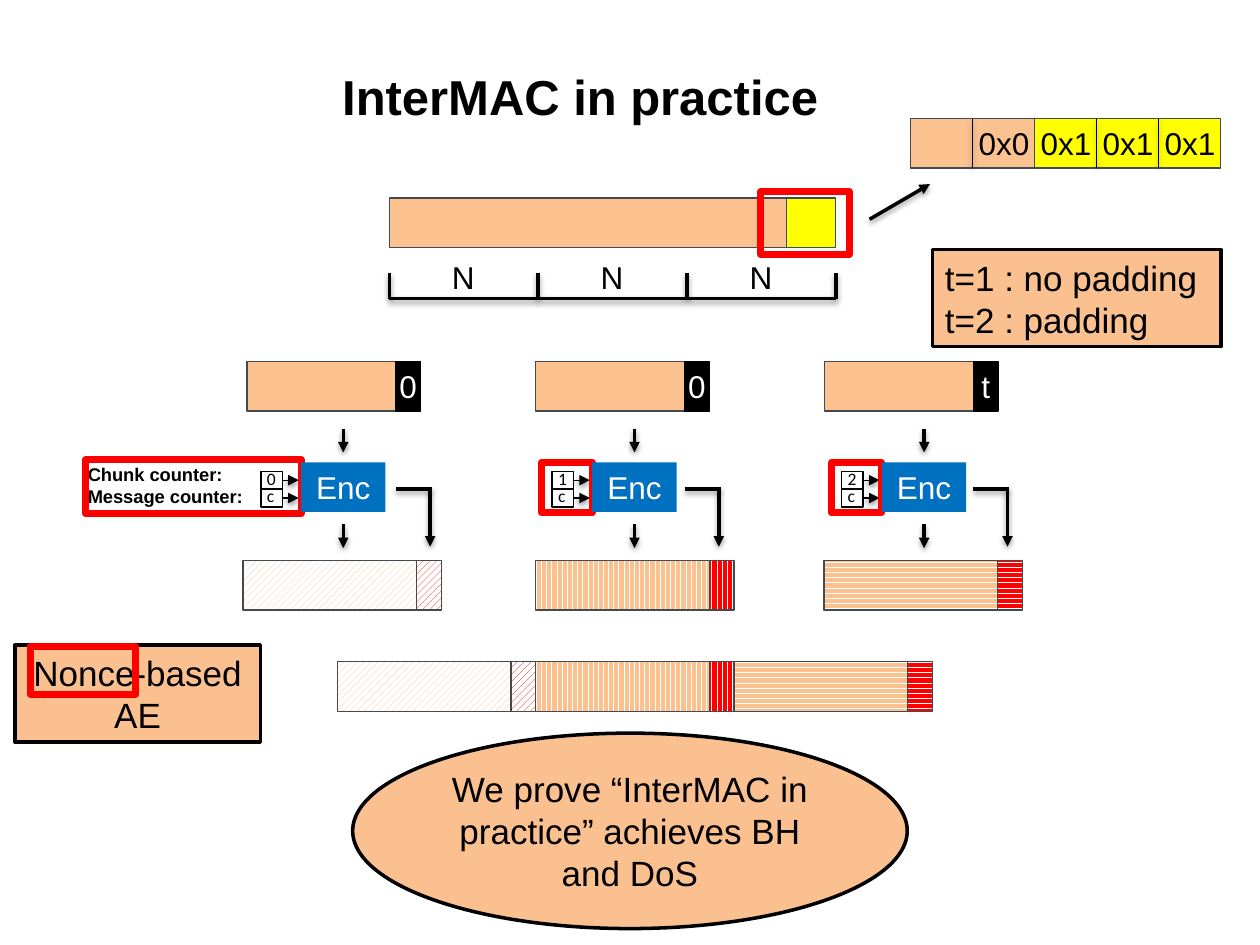
"""Builds the slide showing InterMAC chunking, encryption and nonce layout."""
from lxml.etree import SubElement
from pptx import Presentation
from pptx.dml.color import RGBColor
from pptx.enum.dml import MSO_PATTERN as Pattern
from pptx.enum.shapes import MSO_CONNECTOR as Connector, MSO_SHAPE as Shape
from pptx.enum.text import MSO_ANCHOR as Anchor, PP_ALIGN as Align
from pptx.oxml.ns import qn
from pptx.util import Cm, Pt

COLORS = {
    "black": "000000", "white": "FFFFFF", "red": "FF0000", "yellow": "FFFF00",
    "blue": "0070C0", "data": "FBC18F", "note": "FAC090", "edge": "424A4F",
}
CHUNKS = [
    {"tag": "0", "counter": "0", "enc": 6.07, "cipher": 4.9, "pattern": Pattern.WIDE_UPWARD_DIAGONAL},
    {"tag": "0", "counter": "1", "enc": 11.94, "cipher": 10.8, "pattern": Pattern.DARK_VERTICAL},
    {"tag": "t", "counter": "2", "enc": 17.78, "cipher": 16.61, "pattern": Pattern.DARK_HORIZONTAL},
]
COUNTER_NAMES = ["Chunk counter:", "Message counter:"]
PADDING_BYTES = ["0x0", "0x1", "0x1", "0x1"]
TAG_RULES = ["t=1 : no padding", "t=2 : padding"]
NONCE_NOTE = ["Nonce-based", "AE"]
CLAIM = ["We prove “InterMAC in practice” achieves BH and DoS"]
FRAMES = [
    (15.34, 3.86, 1.78, 1.27), (1.73, 9.27, 4.34, 1.09), (10.92, 9.32, 1.02, 1.02),
    (16.76, 9.32, 1.02, 1.02), (0.61, 13.03, 2.13, 0.97),
]
BAR, TAG, SEGMENT, CIPHER = 1.0, 0.5, 3.0, 3.5
MESSAGE_LEFT, CHUNK_LEFT, CHUNK_STEP = 7.85, 4.98, 5.82
ENC_TOP, ENC_WIDTH = 9.32, 1.7
BYTES_LEFT, BYTES_TOP, BYTE = 18.36, 2.39, 1.25

deck = Presentation()
deck.slide_width, deck.slide_height = Cm(25.4), Cm(19.05)
page = deck.slides.add_slide(deck.slide_layouts[6])


def color(name):
    return RGBColor.from_string(COLORS[name])


def write(frame, lines, size, ink="black", align=Align.LEFT, font="Arial", bold=False):
    for index, line in enumerate(lines):
        para = frame.paragraphs[0] if index == 0 else frame.add_paragraph()
        para.alignment = align
        span = para.add_run()
        span.text = line
        span.font.name, span.font.size, span.font.bold = font, Pt(size), bold
        span.font.color.rgb = color(ink)


def label(left, top, width, height, lines, size, wrap=False, **style):
    box = page.shapes.add_textbox(Cm(left), Cm(top), Cm(width), Cm(height))
    box.text_frame.word_wrap = wrap
    write(box.text_frame, lines, size, **style)


def block(left, top, width, height, fill=None, line="edge", weight=0.75,
          pattern=None, kind=Shape.RECTANGLE):
    box = page.shapes.add_shape(kind, Cm(left), Cm(top), Cm(width), Cm(height))
    box.shadow.inherit = False
    if pattern is not None:
        box.fill.patterned()
        box.fill.pattern = pattern
        box.fill.fore_color.rgb, box.fill.back_color.rgb = color(fill), color("white")
    elif fill:
        box.fill.solid()
        box.fill.fore_color.rgb = color(fill)
    else:
        box.fill.background()
    if line:
        box.line.color.rgb = color(line)
        box.line.width = Pt(weight)
    else:
        box.line.fill.background()
    frame = box.text_frame
    frame.word_wrap = True
    frame.vertical_anchor = Anchor.MIDDLE
    if width <= TAG:
        frame.margin_left = frame.margin_right = 0
    return frame


def stroke(x1, y1, x2, y2, weight=2, arrow=False):
    connector = page.shapes.add_connector(Connector.STRAIGHT, Cm(x1), Cm(y1), Cm(x2), Cm(y2))
    connector.line.color.rgb = color("black")
    connector.line.width = Pt(weight)
    if arrow:
        SubElement(connector.element.spPr.find(qn("a:ln")), qn("a:tailEnd"), type="triangle")


def draw_message():
    block(MESSAGE_LEFT, 3.99, 8, BAR, "data")
    block(MESSAGE_LEFT + 8, 3.99, BAR, BAR, "yellow")
    stroke(MESSAGE_LEFT, 6.02, MESSAGE_LEFT + 3 * SEGMENT, 6.02)
    for index in range(4):
        left = MESSAGE_LEFT + index * SEGMENT
        stroke(left, 5.51, left, 6.02)
        if index < 3:
            label(left + 1.01, 5.08, 0.97, 1.02, ["N"], 18)
    stroke(17.53, 4.42, 18.75, 3.71, arrow=True)


def draw_ciphertext(left, top, pattern):
    block(left, top, CIPHER, BAR, "data", pattern=pattern)
    block(left + CIPHER, top, TAG, BAR, "red", pattern=pattern)


def draw_chunk(index, chunk):
    left, enc = CHUNK_LEFT + index * CHUNK_STEP, chunk["enc"]
    tag_left = left + SEGMENT
    block(left, 7.29, SEGMENT, BAR, "data")
    tag = block(tag_left, 7.29, TAG, BAR, "black", "black")
    write(tag, [chunk["tag"]], 18, "white", Align.CENTER)
    middle = enc + ENC_WIDTH / 2
    for top in (8.64, 10.57):
        stroke(middle, top, middle, top + 0.48, arrow=True)
    for row, value in enumerate([chunk["counter"], "c"]):
        top = 9.5 + row * 0.36
        block(enc - 0.81, top, 0.43, 0.36, line="black")
        label(enc - 0.94, top - 0.2, 0.56, 0.69, [value], 10, True, font="Calibri")
        stroke(enc - 0.38, top + 0.18, enc - 0.05, top + 0.18, 0.75, True)
    stroke(tag_left, 9.86, tag_left + 0.73, 9.86)
    stroke(tag_left + 0.69, 9.86, tag_left + 0.69, 11.02, arrow=True)
    draw_ciphertext(chunk["cipher"], 11.3, chunk["pattern"])
    draw_ciphertext(6.8 + index * (CIPHER + TAG), 13.34, chunk["pattern"])


def draw_padding():
    block(BYTES_LEFT, BYTES_TOP, 2 * BYTE, BAR, "data")
    block(BYTES_LEFT + 2 * BYTE, BYTES_TOP, 3 * BYTE, BAR, "yellow")
    for index, value in enumerate(PADDING_BYTES, 1):
        left = BYTES_LEFT + index * BYTE
        if index != 2:
            stroke(left, BYTES_TOP, left, BYTES_TOP + BAR, 0.5)
        label(left - 0.13, BYTES_TOP - 0.02, 1.55, 1.02, [value], 18)


def main():
    label(6.65, 1.22, 10.24, 1.45, ["InterMAC in practice"], 28, bold=True)
    draw_message()
    label(1.52, 9.22, 3.84, 1.14, COUNTER_NAMES, 10.5, True, bold=True)
    for index, chunk in enumerate(CHUNKS):
        draw_chunk(index, chunk)
    draw_padding()
    write(block(18.8, 5.03, 5.82, 1.96, "note", "black", 2), TAG_RULES, 20)
    write(block(0.3, 13, 4.95, 1.96, "note", "black", 2), NONCE_NOTE, 20, align=Align.CENTER)
    claim = block(7.11, 14.78, 11.18, 3.94, "note", "black", 2, kind=Shape.OVAL)
    write(claim, CLAIM, 20, align=Align.CENTER)
    for frame in FRAMES:
        block(*frame, line="red", weight=4)
    for chunk in CHUNKS:
        enc = block(chunk["enc"], ENC_TOP, ENC_WIDTH, BAR, "blue", None)
        write(enc, ["Enc"], 18, "white", Align.CENTER)
    deck.save("out.pptx")


if __name__ == "__main__":
    main()
